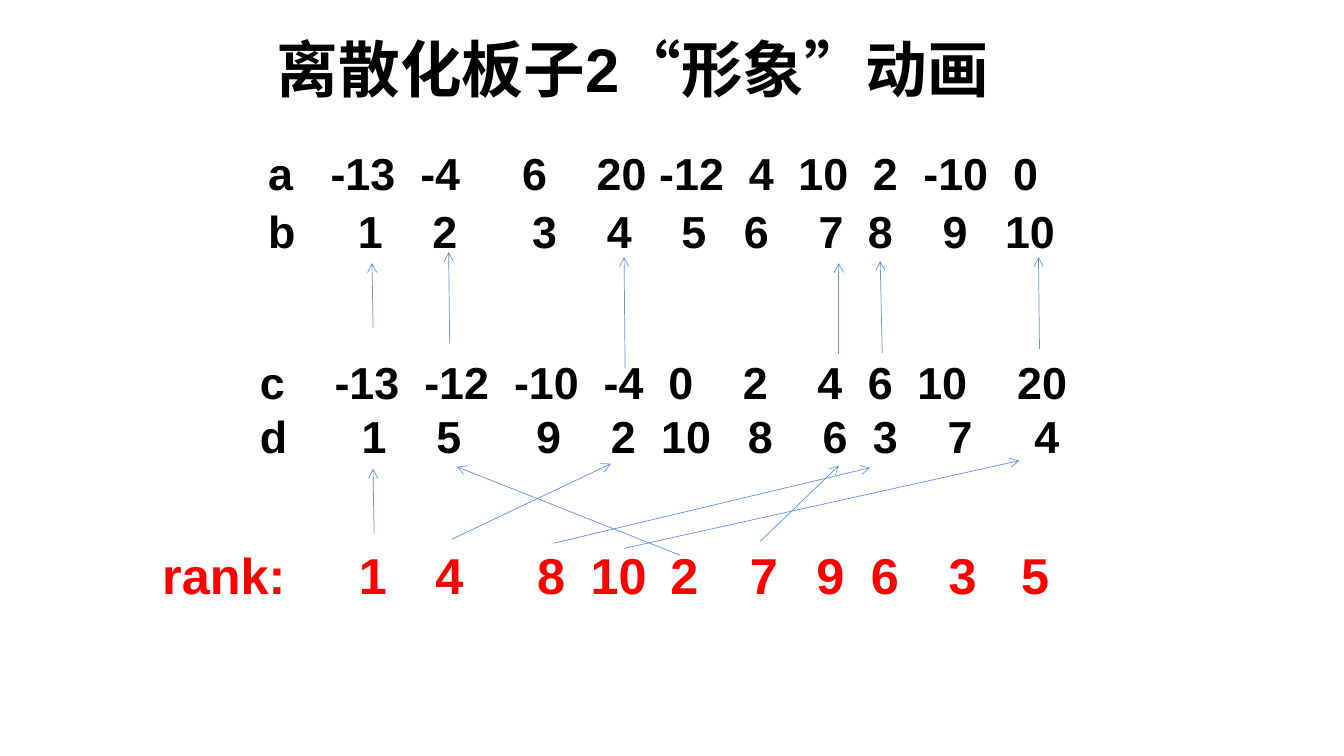
from pptx import Presentation
from pptx import util as u
from pptx.dml.color import RGBColor
from pptx.enum import lang, shapes, text
from pptx.oxml import ns
from lxml import etree

COLORS = {"ink": "000000", "rank": "FF0000", "arrow": "6096E6"}
FONT = "Arial"

# Each row: label, then (tab stop in inches, value)
ROW_A = ("a", [(0.62, "-13"), (1.51, "-4"), (2.52, "6"), (3.26, "20"), (3.88, "-12"),
               (4.77, "4"), (5.26, "10"), (6.0, "2"), (6.5, "-10"), (7.39, "0")])
ROW_B = ("b", [(0.89, "1"), (1.63, "2"), (2.62, "3"), (3.36, "4"), (4.1, "5"),
               (4.72, "6"), (5.46, "7"), (5.95, "8"), (6.69, "9"), (7.31, "10")])
ROW_C = ("c", [(0.74, "-13"), (1.63, "-12"), (2.52, "-10"), (3.41, "-4"), (4.05, "0"),
               (4.79, "2"), (5.53, "4"), (6.03, "6"), (6.52, "10"), (7.51, "20")])
ROW_D = ("d", [(1.01, "1"), (1.75, "5"), (2.74, "9"), (3.48, "2"), (3.98, "10"),
               (4.84, "8"), (5.58, "6"), (6.08, "3"), (6.82, "7"), (7.68, "4")])

# Left, width, text of each rank entry
RANKS = [(1.51, 1.58, "rank:"), (3.46, 0.49, "1"), (4.22, 0.49, "4"), (5.23, 0.49, "8"),
         (5.76, 0.88, "10"), (6.55, 0.88, "2"), (7.34, 0.6, "7"), (8.0, 0.6, "9"),
         (8.54, 0.58, "6"), (9.31, 0.58, "3"), (10.03, 0.86, "5")]

# Start x, start y, end x, end y
SORTED_TO_INPUT = [(3.7, 3.25, 3.69, 2.61), (4.46, 3.41, 4.45, 2.5),
                   (6.2, 3.66, 6.19, 2.55), (8.32, 3.51, 8.32, 2.61),
                   (8.75, 3.5, 8.73, 2.59), (10.31, 3.46, 10.3, 2.55)]
RANK_TO_SORTED = [(3.71, 5.3, 3.7, 4.65), (4.48, 5.35, 6.06, 4.6),
                  (5.49, 5.39, 8.63, 4.64), (6.19, 5.44, 10.11, 4.57),
                  (6.75, 5.51, 4.53, 4.63), (7.54, 5.37, 8.32, 4.62)]


def write(para, words, size=32, color="ink", align=text.PP_ALIGN.LEFT, language=None):
    """Add one formatted span to a paragraph."""
    para.alignment = align
    span = para.add_run()
    span.text = words
    font = span.font
    font.name, font.size, font.bold = FONT, u.Pt(size), True
    font.color.rgb = RGBColor.from_string(COLORS[color])
    if language:
        font.language_id = language


class Board:
    """Style and current slide."""

    def __init__(self, deck):
        self.page = deck.slides.add_slide(deck.slide_layouts[5])

    def title(self, words, left, top, width, height):
        box = self.page.shapes.title
        box.left, box.top = u.Inches(left), u.Inches(top)
        box.width, box.height = u.Inches(width), u.Inches(height)
        frame = box.text_frame
        frame.word_wrap = True
        frame.auto_size = text.MSO_AUTO_SIZE.NONE
        frame.vertical_anchor = text.MSO_ANCHOR.TOP
        write(frame.paragraphs[0], words, size=44, align=text.PP_ALIGN.CENTER,
              language=lang.MSO_LANGUAGE_ID.SIMPLIFIED_CHINESE)

    def textbox(self, left, top, width, height):
        box = self.page.shapes.add_textbox(*map(u.Inches, (left, top, width, height)))
        frame = box.text_frame
        frame.word_wrap = True
        frame.auto_size = text.MSO_AUTO_SIZE.SHAPE_TO_FIT_TEXT
        return frame

    def rows(self, left, top, width, height, *rows):
        frame = self.textbox(left, top, width, height)
        for index, (label, cells) in enumerate(rows):
            para = frame.add_paragraph() if index else frame.paragraphs[0]
            write(para, "\t".join([label] + [value for _, value in cells]))
            stops = etree.SubElement(para._p.get_or_add_pPr(), ns.qn("a:tabLst"))
            for stop, _ in cells:
                etree.SubElement(stops, ns.qn("a:tab"), pos=str(u.Inches(stop)), algn="l")

    def rank(self, left, width, words):
        frame = self.textbox(left, 5.35, width, 0.71)
        write(frame.paragraphs[0], words, size=36, color="rank")

    def arrow(self, *ends):
        arrow = self.page.shapes.add_connector(
            shapes.MSO_CONNECTOR.STRAIGHT, *map(u.Inches, ends))
        arrow.line.color.rgb = RGBColor.from_string(COLORS["arrow"])
        arrow.line.width = u.Pt(0.5)
        etree.SubElement(arrow.line._get_or_add_ln(), ns.qn("a:tailEnd"), type="arrow")
        etree.SubElement(arrow._element.spPr, ns.qn("a:effectLst"))


def main():
    deck = Presentation()
    deck.slide_width, deck.slide_height = u.Inches(13.33), u.Inches(7.5)
    board = Board(deck)

    # Title
    board.title("离散化板子2“形象”动画", 2.35, 0.26, 7.86, 0.84)

    # Input values and their indices, then the sorted pairs
    board.rows(2.56, 1.4, 8.59, 0.64, ROW_A)
    board.rows(2.56, 1.97, 8.59, 0.64, ROW_B)
    board.rows(2.48, 3.47, 10.4, 1.18, ROW_C, ROW_D)

    # Ranks
    for entry in RANKS:
        board.rank(*entry)

    # Arrows
    for ends in SORTED_TO_INPUT + RANK_TO_SORTED:
        board.arrow(*ends)

    deck.save("out.pptx")


if __name__ == "__main__":
    main()
